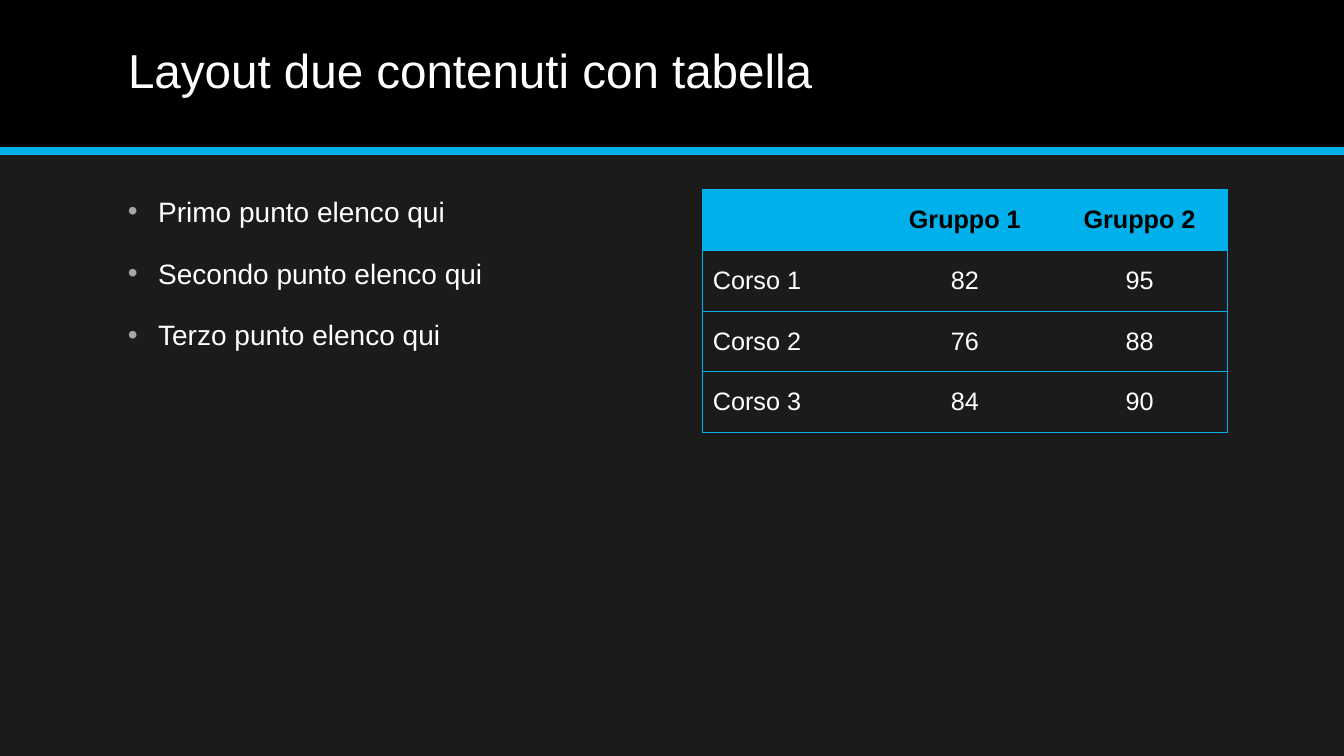
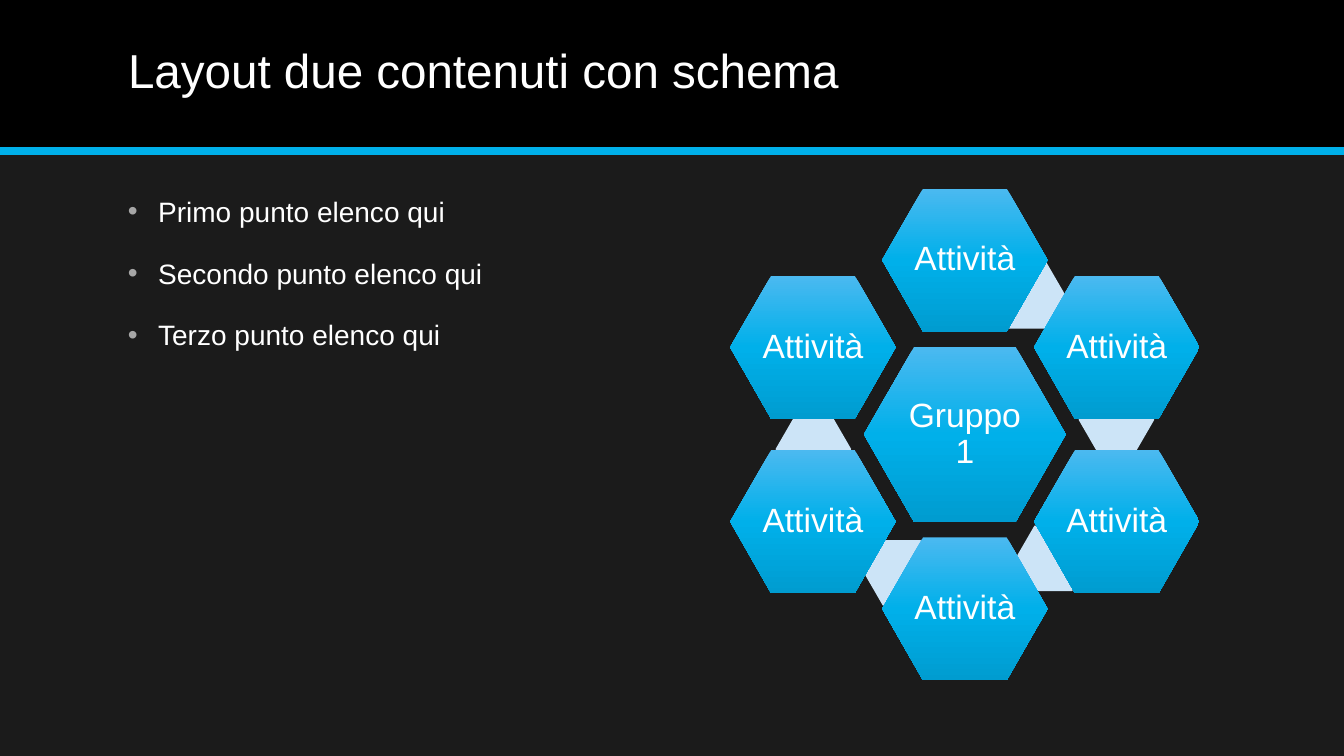
from math import cos, radians, sin

from pptx import Presentation
from pptx.dml.color import RGBColor
from pptx.enum.shapes import MSO_CONNECTOR, MSO_SHAPE
from pptx.enum.text import MSO_ANCHOR, MSO_AUTO_SIZE, PP_ALIGN
from pptx.oxml import parse_xml
from pptx.oxml.ns import nsdecls
from pptx.util import Inches, Pt

LEFT, CENTER = PP_ALIGN.LEFT, PP_ALIGN.CENTER
MIDDLE = MSO_ANCHOR.MIDDLE
NO_AUTOFIT = MSO_AUTO_SIZE.NONE
RECTANGLE, HEXAGON = MSO_SHAPE.RECTANGLE, MSO_SHAPE.HEXAGON
STRAIGHT = MSO_CONNECTOR.STRAIGHT

FONT = "Arial"
DARK, BLACK, WHITE = "1B1B1B", "000000", "FFFFFF"
ACCENT, PALE, GREY = "00B0EA", "CCE4F7", "A6A6A6"
GRADIENT = [(0, "4BB9F0"), (50, ACCENT), (100, "009CD0")]
WIDTH, HEIGHT, BAND = 13.33, 7.5, 1.5

POINTS = ["Primo punto elenco qui", "Secondo punto elenco qui", "Terzo punto elenco qui"]
SCORES = [
    ["", "Gruppo 1", "Gruppo 2"],
    ["Corso 1", "82", "95"],
    ["Corso 2", "76", "88"],
    ["Corso 3", "84", "90"],
]


def rgb(color):
    return RGBColor.from_string(color)


def xml(tag, inner="", attrs=""):
    return parse_xml(f"<a:{tag} {nsdecls('a')} {attrs}>{inner}</a:{tag}>")


def solid(color):
    return f'<a:solidFill><a:srgbClr val="{color}"/></a:solidFill>'


def write(p, text, size=18, color=WHITE, bold=False, align=LEFT, spacing=None):
    p.alignment = align
    if spacing:
        p.line_spacing = spacing
    r = p.add_run()
    r.text = text
    r.font.name, r.font.size, r.font.bold = FONT, Pt(size), bold
    r.font.color.rgb = rgb(color)


class Deck:
    """Holds the presentation style and the current slide."""

    def __init__(self):
        self.prs = Presentation()
        self.prs.slide_width, self.prs.slide_height = Inches(WIDTH), Inches(HEIGHT)
        fill = self.prs.slide_master.background.fill
        fill.solid()
        fill.fore_color.rgb = rgb(DARK)

    def slide(self, title):
        self.s = self.prs.slides.add_slide(self.prs.slide_layouts.get_by_name("Title Only"))
        self.shape(RECTANGLE, 0, 0, WIDTH, BAND, BLACK)
        self.rule(BAND)
        sp = self.s.shapes.title
        sp.left, sp.top, sp.width, sp.height = map(Inches, (1.17, 0.13, 11, 1.2))
        sp.element.getparent().append(sp.element)
        tf = sp.text_frame
        tf.auto_size, tf.vertical_anchor = NO_AUTOFIT, MIDDLE
        write(tf.paragraphs[0], title, size=34, spacing=0.9)

    def shape(self, kind, x, y, w, h, color=None):
        sp = self.s.shapes.add_shape(kind, *map(Inches, (x, y, w, h)))
        sp.shadow.inherit = False
        sp.line.fill.background()
        if color:
            sp.fill.solid()
            sp.fill.fore_color.rgb = rgb(color)
        return sp

    def rule(self, y):
        line = self.s.shapes.add_connector(STRAIGHT, 0, Inches(y), Inches(WIDTH), Inches(y))
        line.line.color.rgb = rgb(ACCENT)
        line.line.width = Pt(6)
        line.element.spPr.append(xml("effectLst"))

    def bullets(self, points):
        tf = self.s.shapes.add_textbox(*map(Inches, (1.17, 1.88, 5.2, 4.88))).text_frame
        tf.word_wrap = True
        for i, point in enumerate(points):
            p = tf.add_paragraph() if i else tf.paragraphs[0]
            pPr = p._p.get_or_add_pPr()
            pPr.set("marL", str(Inches(0.3)))
            pPr.set("indent", str(Inches(-0.3)))
            pPr.append(xml("buClr", f'<a:srgbClr val="{GREY}"/>'))
            pPr.append(xml("buFont", attrs=f'typeface="{FONT}"'))
            pPr.append(xml("buChar", attrs='char="•"'))
            p.space_before = Pt(20 if i else 0)
            write(p, point, size=20)

    def table(self, rows, x, y, w, h):
        last = len(rows[0]) - 1
        frame = self.s.shapes.add_table(len(rows), last + 1, *map(Inches, (x, y, w, h)))
        for i, row in enumerate(rows):
            for j, text in enumerate(row):
                cell = frame.table.cell(i, j)
                cell.vertical_anchor = MIDDLE
                cell.fill.solid()
                cell.fill.fore_color.rgb = rgb(DARK if i else ACCENT)
                self.borders(cell, left=j == 0, right=j == last)
                if text:
                    write(cell.text_frame.paragraphs[0], text, bold=i == 0,
                          color=WHITE if i else BLACK, align=CENTER if j else LEFT)

    def borders(self, cell, left, right):
        tcPr = cell._tc.get_or_add_tcPr()
        sides = [("lnL", left), ("lnR", right), ("lnT", True), ("lnB", True)]
        for k, (tag, shown) in enumerate(sides):
            tcPr.insert(k, xml(tag, solid(ACCENT) if shown else "<a:noFill/>", f'w="{Pt(0.5)}"'))

    def hexagon(self, cx, cy, w, h, text=None):
        sp = self.shape(HEXAGON, cx - w / 2, cy - h / 2, w, h, None if text else PALE)
        sp.adjustments[0] = 0.286 if text else 0.289
        if not text:
            return
        stops = "".join(f'<a:gs pos="{pos * 1000}"><a:srgbClr val="{color}"/></a:gs>'
                        for pos, color in GRADIENT)
        fill = xml("gradFill", f'<a:gsLst>{stops}</a:gsLst><a:lin ang="5400000" scaled="0"/>')
        sp.element.spPr.prstGeom.addnext(fill)
        tf = sp.text_frame
        tf.word_wrap, tf.vertical_anchor = True, MIDDLE
        tf.margin_left = tf.margin_right = tf.margin_top = tf.margin_bottom = Inches(0.03)
        write(tf.paragraphs[0], text, size=24, align=CENTER, spacing=0.9)

    def hexagon_ring(self, hub, activities, cx, cy):
        self.hexagon(cx, cy, 2, 1.73, hub)
        step = 360 / len(activities)
        for i, activity in enumerate(activities):
            if i < len(activities) - 1:
                turn = radians(step * i + 24.5)
                self.hexagon(cx + 1.51 * sin(turn), cy - 1.51 * cos(turn), 0.75, 0.65)
            turn = radians(step * i)
            self.hexagon(cx + 1.74 * sin(turn), cy - 1.73 * cos(turn), 1.64, 1.42, activity)


def main():
    deck = Deck()
    deck.slide("Layout due contenuti con tabella")
    deck.bullets(POINTS)
    deck.table(SCORES, 6.97, 1.88, 5.2, 2.41)
    deck.slide("Layout due contenuti con schema")
    deck.bullets(POINTS)
    deck.hexagon_ring("Gruppo 1", ["Attività"] * 6, 9.57, 4.31)
    deck.prs.save("out.pptx")


if __name__ == "__main__":
    main()
